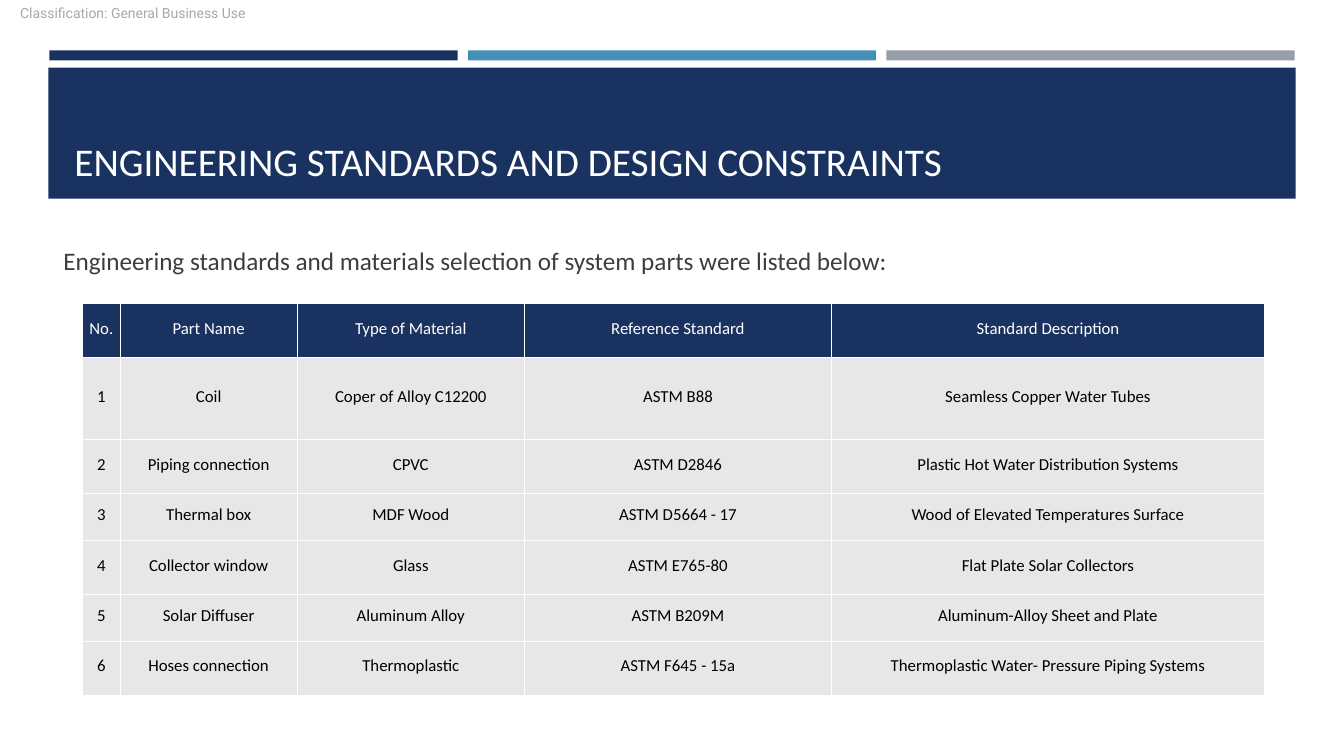
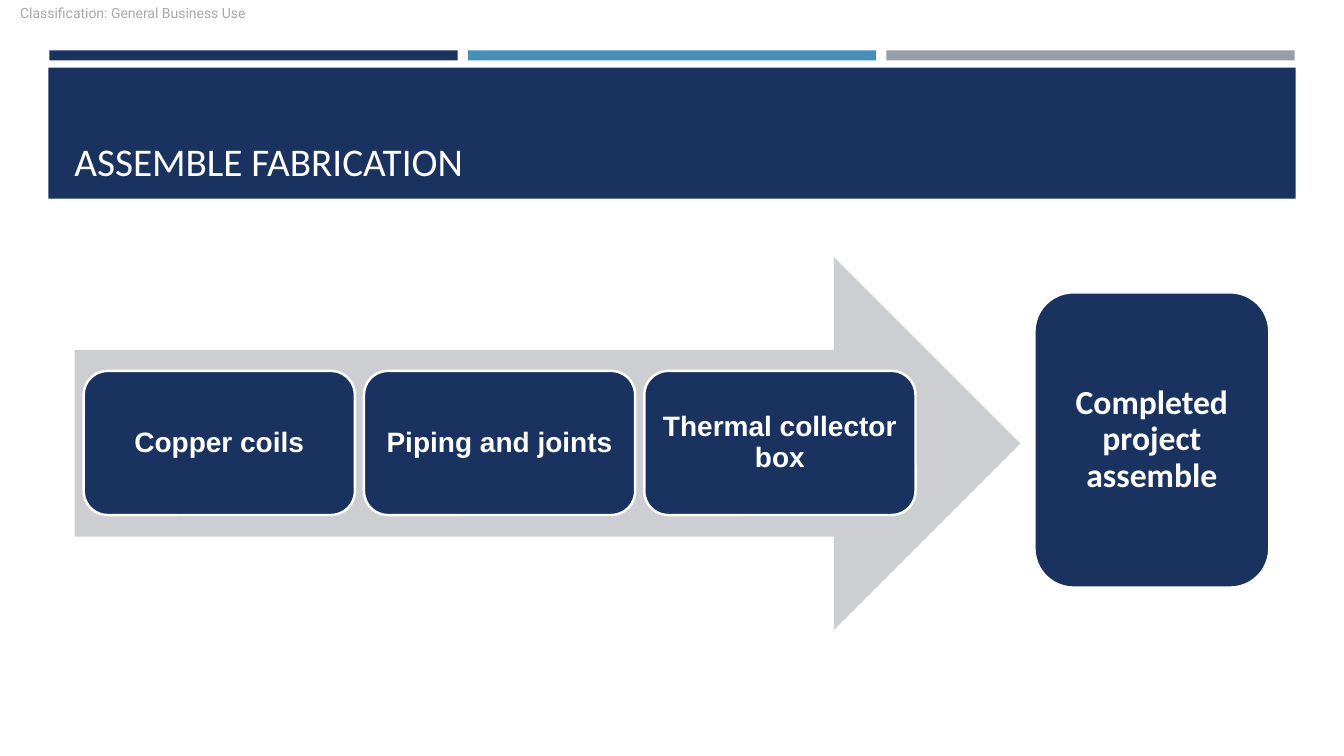
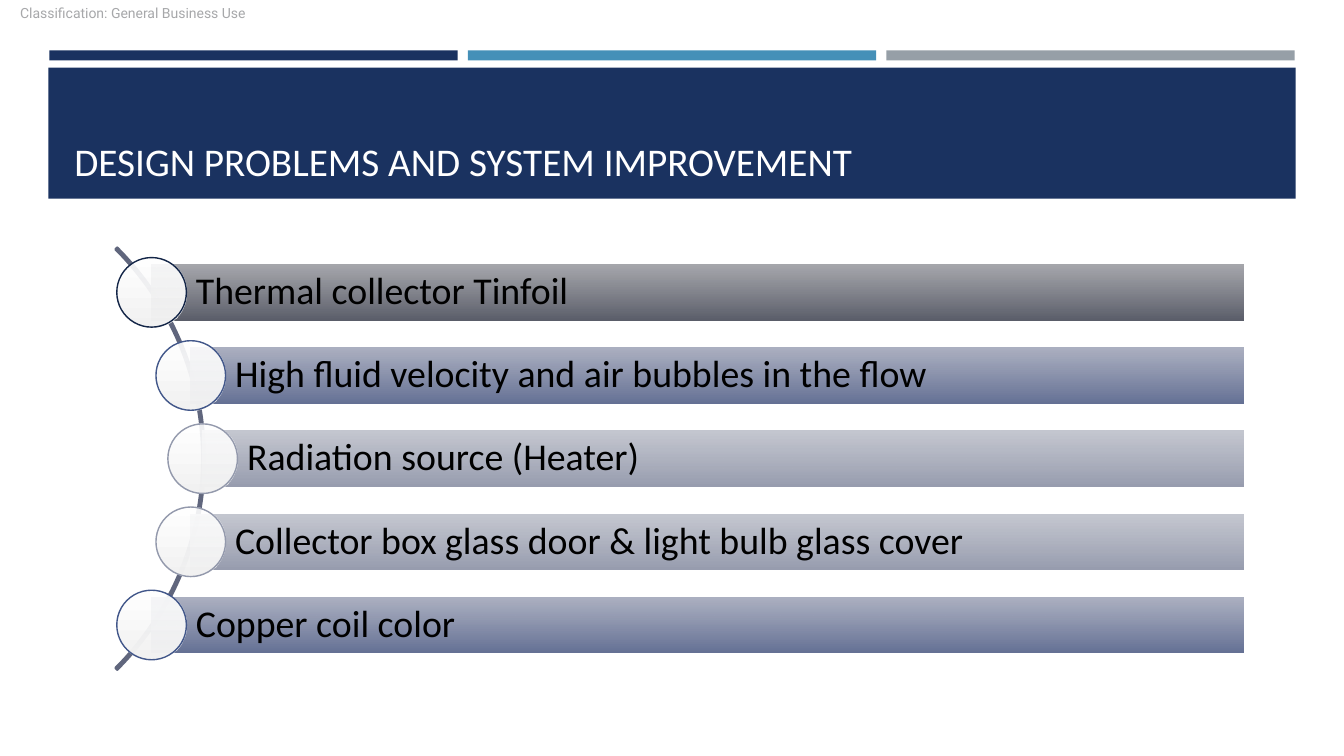
from math import sqrt

from lxml.etree import SubElement
from pptx import Presentation
from pptx.dml.color import RGBColor
from pptx.enum.shapes import MSO_SHAPE
from pptx.enum.text import MSO_ANCHOR, PP_ALIGN
from pptx.oxml.ns import qn
from pptx.util import Inches, Pt

RECT = MSO_SHAPE.RECTANGLE
ROUNDED = MSO_SHAPE.ROUNDED_RECTANGLE
ARROW = MSO_SHAPE.RIGHT_ARROW
ARC = MSO_SHAPE.BLOCK_ARC
CIRCLE = MSO_SHAPE.OVAL
MIDDLE, BOTTOM = MSO_ANCHOR.MIDDLE, MSO_ANCHOR.BOTTOM
LEFT, CENTER = PP_ALIGN.LEFT, PP_ALIGN.CENTER

COLORS = {
    "navy": "1A3260", "blue": "4590B8", "gray": "969FA7", "white": "FFFFFF",
    "black": "000000", "body": "3D3D3D", "label": "A7A8AA", "cell": "E7E7E9",
    "arrow": "CDCED2", "arc": "60667D", "circle_end": "F2F2F2",
    "dark_top": "9C9DA3", "dark_end": "5A5D69", "dark_line": "132547",
    "indigo_top": "A2A7BA", "indigo_end": "657195", "indigo_line": "42578A",
    "pale_top": "BEC1CB", "pale_end": "989DAF", "pale_line": "9399AC",
}
DEFAULT_INSETS = (0.1, 0.05, 0.1, 0.05)

PARTS = [
    ("No.", "Part Name", "Type of Material", "Reference Standard", "Standard Description"),
    ("1", "Coil", "Coper of Alloy C12200", "ASTM B88", "Seamless Copper Water Tubes"),
    ("2", "Piping connection", "CPVC", "ASTM D2846", "Plastic Hot Water Distribution Systems"),
    ("3", "Thermal box", "MDF Wood", "ASTM D5664 - 17", "Wood of Elevated Temperatures Surface"),
    ("4", "Collector window", "Glass", "ASTM E765-80", "Flat Plate Solar Collectors"),
    ("5", "Solar Diffuser", "Aluminum Alloy", "ASTM B209M", "Aluminum-Alloy Sheet and Plate"),
    ("6", "Hoses connection", "Thermoplastic", "ASTM F645 - 15a",
     "Thermoplastic Water- Pressure Piping Systems"),
]
PART_COLUMNS = (0.37, 1.76, 2.25, 3.05, 4.29)
PART_ROWS = (0.54, 0.81, 0.54, 0.46, 0.54, 0.46, 0.54)

STEPS = ("Copper coils", "Piping and joints", "Thermal collector box")

# Text and colour family of each bar
PROBLEMS = [
    ("Thermal collector Tinfoil", "dark"),
    ("High fluid velocity and air bubbles in the flow", "indigo"),
    ("Radiation source (Heater)", "pale"),
    ("Collector box glass door & light bulb glass cover", "pale"),
    ("Copper coil color", "indigo"),
]


def rgb(name):
    return RGBColor.from_string(COLORS[name])


def style_paragraph(para, text, size, color, font="Calibri", bold=False, align=LEFT):
    para.text = text
    para.alignment = align
    para.font.size = Pt(size)
    para.font.name = font
    para.font.bold = bold
    para.font.color.rgb = rgb(color)


def write(box, text, size, color, anchor=MIDDLE, insets=DEFAULT_INSETS, spacing=None, **style):
    frame = box.text_frame
    frame.word_wrap = True
    frame.vertical_anchor = anchor
    (frame.margin_left, frame.margin_top,
     frame.margin_right, frame.margin_bottom) = map(Inches, insets)
    para = frame.paragraphs[0]
    style_paragraph(para, text, size, color, **style)
    if spacing:
        para.line_spacing = spacing


def add_text(page, bounds, text, size, color, **options):
    box = page.shapes.add_textbox(*map(Inches, bounds))
    write(box, text, size, color, **options)


def add_figure(page, kind, bounds, fill=None, line=None, width=1.75):
    """Add a preset shape; a pair of fill names makes a vertical gradient."""
    shape = page.shapes.add_shape(kind, *map(Inches, bounds))
    shape.shadow.inherit = False
    if fill is None:
        shape.fill.background()
    elif isinstance(fill, tuple):
        shape.fill.gradient()
        shape.fill.gradient_angle = 270
        for stop, name in zip(shape.fill.gradient_stops, fill):
            stop.color.rgb = rgb(name)
        first_color = shape.element.spPr.find(".//" + qn("a:srgbClr"))
        SubElement(first_color, qn("a:alpha"), val="90000")
    else:
        shape.fill.solid()
        shape.fill.fore_color.rgb = rgb(fill)
    if line:
        shape.line.color.rgb = rgb(line)
        shape.line.width = Pt(width)
    else:
        shape.line.fill.background()
    return shape


def border_cell(cell, color, width):
    properties = cell._tc.get_or_add_tcPr()
    for position, side in enumerate(("a:lnL", "a:lnR", "a:lnT", "a:lnB")):
        edge = properties.makeelement(qn(side), {"w": str(Pt(width))})
        fill = SubElement(edge, qn("a:solidFill"))
        SubElement(fill, qn("a:srgbClr"), val=COLORS[color])
        properties.insert(position, edge)


def add_grid(page, left, top, columns, heights, rows):
    frame = page.shapes.add_table(len(rows), len(columns), Inches(left), Inches(top),
                                  Inches(sum(columns)), Inches(sum(heights)))
    table = frame.table
    table.horz_banding = False
    for column, width in zip(table.columns, columns):
        column.width = Inches(width)
    for r, (row, height) in enumerate(zip(rows, heights)):
        table.rows[r].height = Inches(height)
        for c, text in enumerate(row):
            cell = table.cell(r, c)
            cell.fill.solid()
            cell.fill.fore_color.rgb = rgb("cell" if r else "navy")
            cell.vertical_anchor = MIDDLE
            cell.margin_left = cell.margin_top = cell.margin_right = 0
            cell.margin_bottom = Inches(0.04)
            style_paragraph(cell.text_frame.paragraphs[0], text, 12,
                            "black" if r else "white", align=CENTER)
            border_cell(cell, "white", 0.67)


def add_page(deck, title):
    """Add a slide with the strips, classification label and title band."""
    page = deck.slides.add_slide(deck.slide_layouts[6])
    for i, color in enumerate(("navy", "blue", "gray")):
        add_figure(page, RECT, (0.49 + 4.15 * i, 0.5, 4.05, 0.1), color)
    add_text(page, (0, 0, 2.67, 0.26), "Classification: General Business Use", 10, "label",
             insets=(0.2, 0, 0, 0), font="Roboto")
    add_figure(page, RECT, (0.48, 0.67, 12.37, 1.3), "navy")
    add_text(page, (0.64, 0.77, 12.06, 1.11), title, 28, "white", anchor=BOTTOM)
    return page


def build_standards(deck):
    page = add_page(deck, "ENGINEERING STANDARDS AND DESIGN CONSTRAINTS")
    add_text(page, (0.53, 2.2, 12.06, 0.77),
             "Engineering standards and materials selection of system parts were listed below:",
             18, "body")
    add_grid(page, 0.82, 3.01, PART_COLUMNS, PART_ROWS, PARTS)


def build_fabrication(deck):
    page = add_page(deck, "ASSEMBLE FABRICATION")
    add_figure(page, ARROW, (0.74, 2.55, 9.38, 3.7), "arrow")
    for i, text in enumerate(STEPS):
        step = add_figure(page, ROUNDED, (0.83 + 2.78 * i, 3.68, 2.69, 1.43), "navy", "white")
        write(step, text, 20, "white", insets=(0.08,) * 4, spacing=0.9,
              font="Arial", bold=True, align=CENTER)
    result = add_figure(page, ROUNDED, (10.26, 2.9, 2.33, 2.93), "navy", "white")
    write(result, "Completed project assemble", 24, "white", insets=(0.1,) * 4, spacing=0.9,
          bold=True, align=CENTER)


def build_problems(deck):
    page = add_page(deck, "DESIGN PROBLEMS AND SYSTEM IMPROVEMENT")
    center_x, center_y, radius = -0.93, 4.55, 2.96
    arc = add_figure(page, ARC, (center_x - radius, center_y - radius, 2 * radius, 2 * radius),
                     line="arc")
    for i, value in enumerate((189, 27, 0.004)):
        arc.adjustments[i] = value

    # Each bar starts at the middle of its circle, which sits on the arc
    pitch, bar_height, circle, right = 0.825, 0.55, 0.69, 12.33
    track = radius - 0.02
    for i, (text, family) in enumerate(PROBLEMS):
        drop = pitch * (i - 2)
        x = center_x + sqrt(track ** 2 - drop ** 2)
        y = center_y + drop
        bar = add_figure(page, RECT, (x, y - bar_height / 2, right - x, bar_height),
                         (family + "_top", family + "_end"))
        write(bar, text, 27, "black", insets=(0.44, 0.07, 0.07, 0.07), spacing=0.9)
        add_figure(page, CIRCLE, (x - circle / 2, y - circle / 2, circle, circle),
                   ("white", "circle_end"), family + "_line", 1)


def main():
    deck = Presentation()
    deck.slide_width, deck.slide_height = Inches(13.33), Inches(7.5)
    build_standards(deck)
    build_fabrication(deck)
    build_problems(deck)
    deck.save("out.pptx")


if __name__ == "__main__":
    main()
